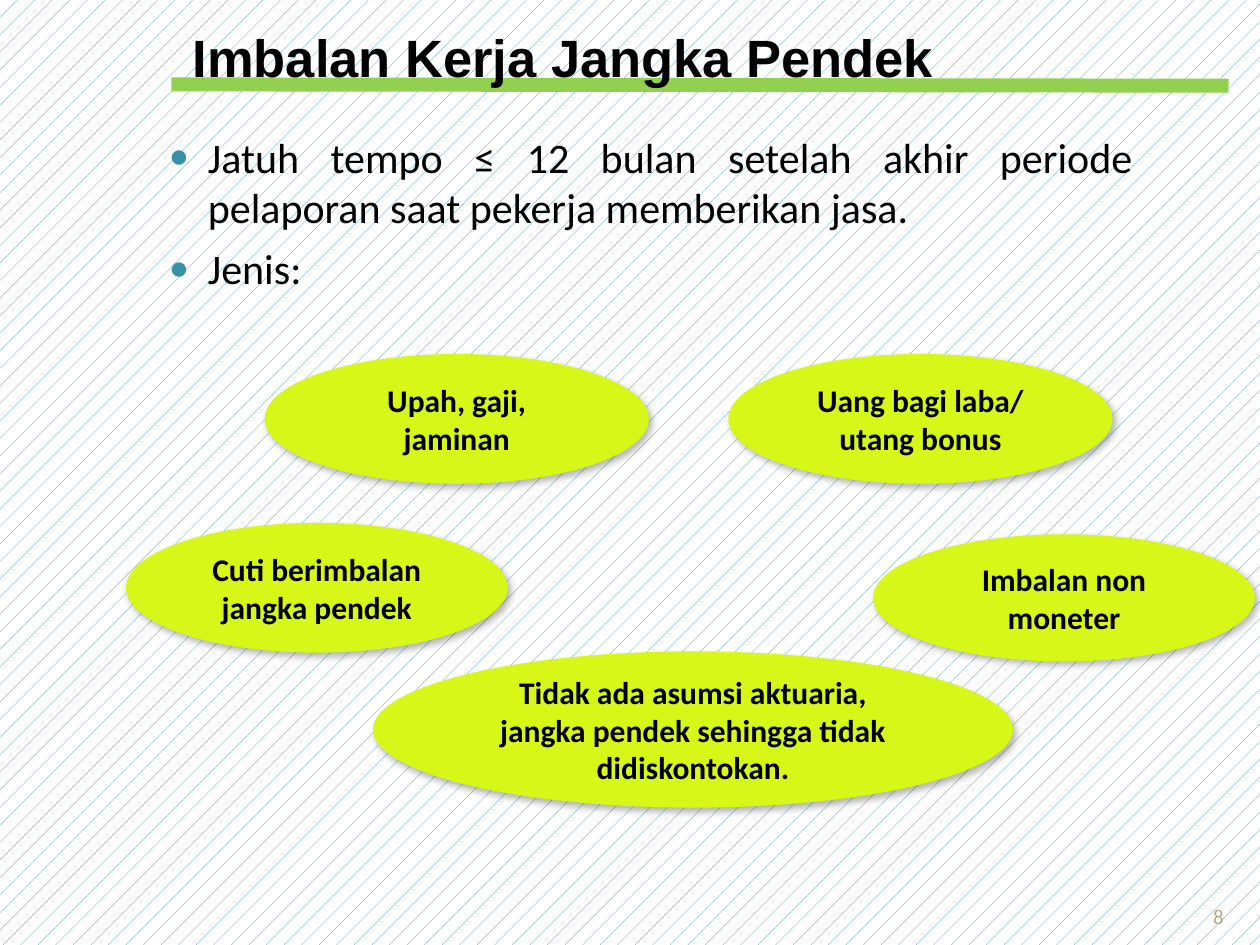
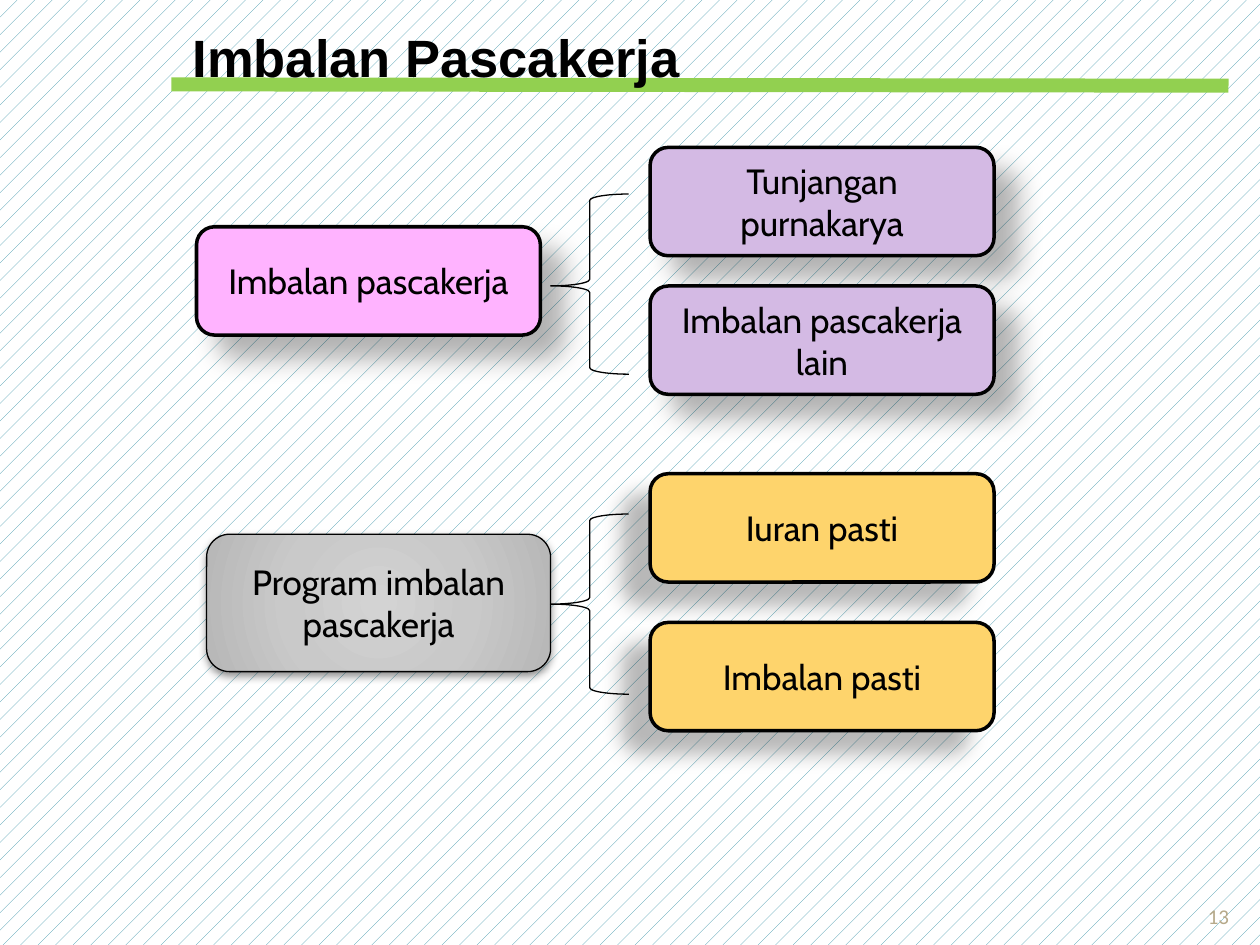
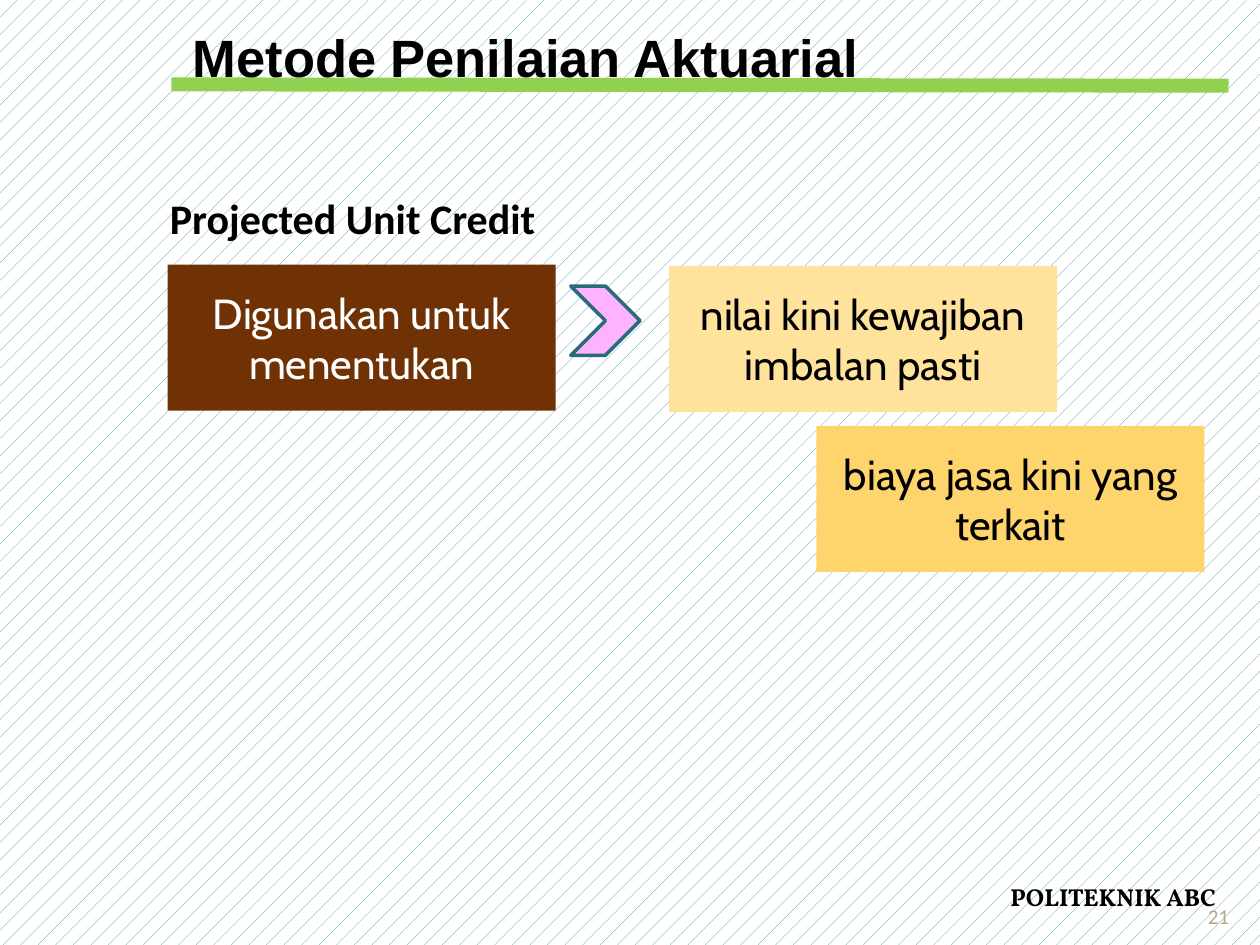
from dataclasses import dataclass

from pptx import Presentation
from pptx.dml.color import RGBColor
from pptx.enum.dml import MSO_PATTERN
from pptx.enum.shapes import MSO_CONNECTOR, MSO_SHAPE
from pptx.enum.text import MSO_ANCHOR, MSO_AUTO_SIZE, PP_ALIGN
from pptx.oxml import parse_xml
from pptx.oxml.ns import nsdecls, qn
from pptx.oxml.xmlchemy import OxmlElement
from pptx.util import Inches, Pt


@dataclass(frozen=True)
class Theme:
    black: str = "000000"
    white: str = "FFFFFF"
    teal: str = "3891A7"
    dark_teal: str = "296B7C"
    green: str = "92D050"
    lime: str = "D7F719"
    pink: str = "FFB3FF"
    lilac: str = "D4BAE4"
    amber: str = "FED46C"
    cream: str = "FFE39D"
    brown: str = "703204"
    sand: str = "B6A98A"
    title: int = 30
    body: int = 24
    box: int = 20
    oval: int = 18
    footer: int = 14
    number: int = 12
    # Shadows: opacity %, blur pt, distance pt, direction in degrees
    soft: tuple = (30, 4.5, 2.6, 53)
    deep_right: tuple = (30, 15, 18, 45)
    deep_left: tuple = (28, 11.8, 19.7, 141)
    below: tuple = (43, 5, 2, 90)


T = Theme()
rgb = RGBColor.from_string


def add_run(p, text, size, font="Calibri", color=T.black, bold=False):
    r = p.add_run()
    r.text = text
    r.font.size, r.font.name, r.font.bold = Pt(size), font, bold
    r.font.color.rgb = rgb(color)


def add_box(s, kind, at, fill=None, line=None, weight=0.75, shadow=None):
    sp = s.shapes.add_shape(kind, *map(Inches, at))
    if fill:
        sp.fill.solid()
        sp.fill.fore_color.rgb = rgb(fill)
    else:
        sp.fill.background()
    if line:
        sp.line.color.rgb = rgb(line)
        sp.line.width = Pt(weight)
    else:
        sp.line.fill.background()
    sp.shadow.inherit = False
    if shadow:
        alpha, blur, dist, angle = shadow
        sp._element.spPr.find(qn("a:effectLst")).append(parse_xml(
            f'<a:outerShdw {nsdecls("a")} blurRad="{Pt(blur)}" dist="{Pt(dist)}" '
            f'dir="{angle * 60000}" algn="tl" rotWithShape="0">'
            f'<a:srgbClr val="{T.black}"><a:alpha val="{alpha * 1000}"/></a:srgbClr>'
            '</a:outerShdw>'))
    tf = sp.text_frame
    tf.word_wrap = True
    tf.vertical_anchor = MSO_ANCHOR.MIDDLE
    tf.paragraphs[0].alignment = PP_ALIGN.CENTER
    return sp


prs = Presentation()
prs.slide_width, prs.slide_height = Inches(10), Inches(7.5)

# Shared background
bg = prs.slide_master.background.fill
bg.patterned()
bg.pattern = MSO_PATTERN.PERCENT_5
bg.fore_color.rgb, bg.back_color.rgb = rgb(T.teal), rgb(T.white)

# Shared title, green band and page number
slides = []
for layout, title, number in (
    (1, "Imbalan Kerja Jangka Pendek", "8"),
    (5, "Imbalan Pascakerja", "13"),
    (5, "Metode Penilaian Aktuarial", "21"),
):
    s = prs.slides.add_slide(prs.slide_layouts[layout])
    slides.append(s)
    sp = s.shapes.title
    sp.left, sp.top, sp.width, sp.height = map(Inches, (1.43, 0, 7.67, 0.69))
    tf = sp.text_frame
    tf.word_wrap = True
    tf.auto_size = MSO_AUTO_SIZE.SHAPE_TO_FIT_TEXT
    tf.vertical_anchor = MSO_ANCHOR.TOP
    p = tf.paragraphs[0]
    p.alignment = PP_ALIGN.LEFT
    p.line_spacing = 1.3
    p._p.get_or_add_pPr().append(parse_xml(
        f'<a:spcBef {nsdecls("a")}><a:spcPct val="30000"/></a:spcBef>'))
    add_run(p, title, T.title, "Arial", bold=True)

    band = s.shapes.add_connector(
        MSO_CONNECTOR.STRAIGHT, *map(Inches, (1.36, 0.67, 9.75, 0.68)))
    band.line.color.rgb = rgb(T.green)
    band.line.width = Pt(8)
    band._element.spPr.append(OxmlElement("a:effectLst"))
    sp._element.addprevious(band._element)

    tf = s.shapes.add_textbox(*map(Inches, (9.42, 6.9, 0.5, 0.52))).text_frame
    tf.word_wrap = True
    tf.vertical_anchor = MSO_ANCHOR.BOTTOM
    tf.paragraphs[0].alignment = PP_ALIGN.CENTER
    add_run(tf.paragraphs[0], number, T.number, color=T.sand)

short_term, post_employment, valuation = slides

# Short-term benefits: bullets
body = short_term.placeholders[1]
body.left, body.top, body.width, body.height = map(Inches, (1.15, 0.99, 7.94, 5.74))
tf = body.text_frame
for i, (text, align) in enumerate((
    ("Jatuh tempo ≤ 12 bulan setelah akhir periode pelaporan saat pekerja "
     "memberikan jasa.", PP_ALIGN.JUSTIFY),
    ("Jenis:", PP_ALIGN.LEFT),
)):
    p = tf.add_paragraph() if i else tf.paragraphs[0]
    p.alignment = align
    p.space_before = Pt(6)
    pPr = p._p.get_or_add_pPr()
    pPr.set("marL", str(Inches(0.4)))
    pPr.set("indent", str(Inches(-0.31)))
    for xml in (f'<a:buClr {nsdecls("a")}><a:srgbClr val="{T.teal}"/></a:buClr>',
                f'<a:buSzPct {nsdecls("a")} val="80000"/>',
                f'<a:buChar {nsdecls("a")} char="●"/>'):
        pPr.append(parse_xml(xml))
    add_run(p, text, T.body)

# Short-term benefits: ovals
for text, at in (
    ("Upah, gaji, jaminan", (2.1, 2.81, 3.05, 1.03)),
    ("Cuti berimbalan jangka pendek", (1, 4.15, 3.03, 1.03)),
    ("Uang bagi laba/ utang bonus", (5.78, 2.81, 3.05, 1.03)),
    ("Imbalan non moneter", (6.93, 4.24, 3.03, 1.01)),
    ("Tidak ada asumsi aktuaria, jangka pendek sehingga tidak didiskontokan.",
     (2.96, 5.17, 5.08, 1.24)),
):
    sp = add_box(short_term, MSO_SHAPE.OVAL, at, T.lime, shadow=T.soft)
    add_run(sp.text_frame.paragraphs[0], text, T.oval, bold=True)

# Post-employment benefits: two trees of rounded boxes
for text, x, y, h, fill, weight, shadow in (
    ("Imbalan pascakerja", 1.56, 1.8, 0.86, T.pink, 2, T.deep_right),
    ("Tunjangan purnakarya", 5.16, 1.17, 0.86, T.lilac, 2, T.deep_right),
    ("Imbalan pascakerja lain", 5.16, 2.27, 0.86, T.lilac, 2, T.deep_right),
    ("Program imbalan pascakerja", 1.64, 4.24, 1.09, None, 0.75, T.below),
    ("Imbalan pasti", 5.16, 4.94, 0.86, T.amber, 2, T.deep_left),
    ("Iuran pasti", 5.16, 3.76, 0.86, T.amber, 2, T.deep_left),
):
    sp = add_box(post_employment, MSO_SHAPE.ROUNDED_RECTANGLE, (x, y, 2.73, h),
                 fill, T.black, weight, shadow)
    add_run(sp.text_frame.paragraphs[0], text, T.box, "Cabin")
    if fill is None:
        # Radial grey fill of the programme box
        stops = "".join(
            f'<a:gs pos="{pos * 1000}"><a:srgbClr val="{grey}"/></a:gs>'
            for pos, grey in ((0, "D3D3D3"), (50, "C9C9C9"), (97, "B8B8B8"), (100, "B2B2B2")))
        spPr = sp._element.spPr
        spPr.replace(spPr.find(qn("a:noFill")), parse_xml(
            f'<a:gradFill {nsdecls("a")} rotWithShape="1"><a:gsLst>{stops}</a:gsLst>'
            '<a:path path="circle"><a:fillToRect l="50000" t="50000" r="50000" '
            'b="50000"/></a:path></a:gradFill>'))

for y, middle in ((1.54, 0.51), (4.08, 0.5)):
    brace = add_box(post_employment, MSO_SHAPE.LEFT_BRACE, (4.37, y, 0.62, 1.43),
                    line=T.black)
    brace.adjustments[1] = middle

# Actuarial valuation: heading and footer
for text, at, size, font in (
    ("Projected Unit Credit", (1.25, 1.48, 4.22, 0.5), T.body, "Calibri"),
    ("POLITEKNIK ABC", (7.92, 6.95, 2.08, 0.34), T.footer, "Vollkorn"),
):
    tf = valuation.shapes.add_textbox(*map(Inches, at)).text_frame
    tf.word_wrap = True
    tf.auto_size = MSO_AUTO_SIZE.SHAPE_TO_FIT_TEXT
    add_run(tf.paragraphs[0], text, size, font, bold=True)

# Actuarial valuation: boxes and chevron
for text, x, y, fill, color in (
    ("Digunakan untuk menentukan", 1.33, 2.1, T.brown, T.white),
    ("nilai kini kewajiban imbalan pasti", 5.31, 2.11, T.cream, T.black),
    ("biaya jasa kini yang terkait", 6.48, 3.38, T.amber, T.black),
):
    sp = add_box(valuation, MSO_SHAPE.RECTANGLE, (x, y, 3.08, 1.16), fill)
    add_run(sp.text_frame.paragraphs[0], text, T.body, "Cabin", color)
add_box(valuation, MSO_SHAPE.CHEVRON, (4.53, 2.27, 0.55, 0.55), T.pink, T.dark_teal, 2)

prs.save("out.pptx")
